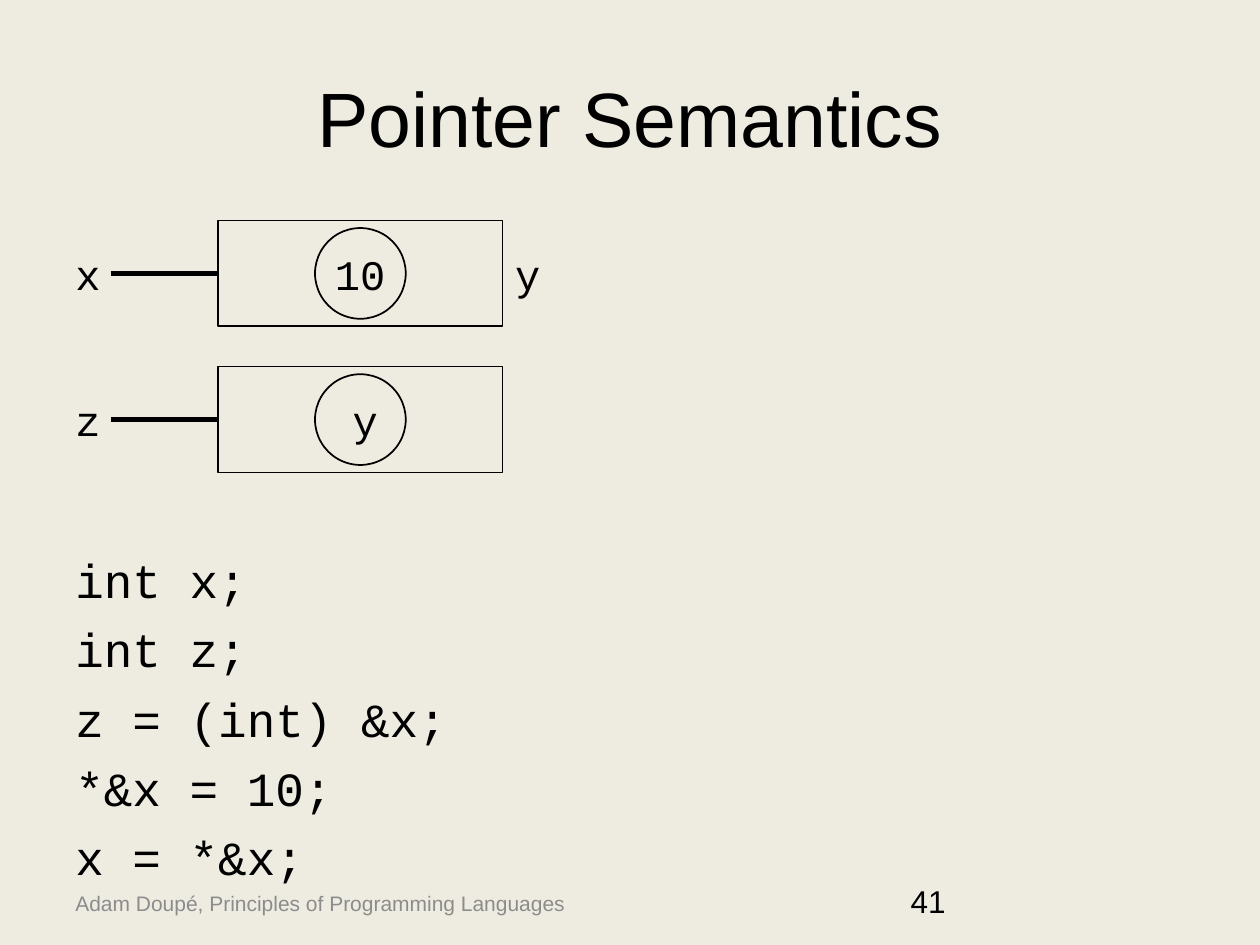
from dataclasses import dataclass

from lxml import etree
from pptx import Presentation
from pptx import util as u
from pptx.dml.color import RGBColor
from pptx.enum import shapes, text
from pptx.oxml.ns import qn


@dataclass(frozen=True)
class Theme:
    back: str = "EEECE1"
    ink: str = "000000"
    gray: str = "8C8C8C"
    sans: str = "Arial"
    mono: str = "Courier New"
    head: float = 44
    code: float = 27.2
    label: float = 24
    page: float = 18
    foot: float = 12
    thin: float = 1
    thick: float = 3


THEME = Theme()


def write(frame, lines, font=THEME.sans, size=THEME.label, color=THEME.ink,
          align=text.PP_ALIGN.LEFT, anchor=text.MSO_ANCHOR.TOP, gap=0):
    """Fill a text frame, one paragraph per line."""
    frame.word_wrap = True
    frame.vertical_anchor = anchor
    for i, line in enumerate(lines.split("\n")):
        para = frame.paragraphs[0] if i == 0 else frame.add_paragraph()
        para.alignment = align
        para.space_before = u.Pt(gap if i else 0)
        run = para.add_run()
        run.text = line
        run.font.name = font
        run.font.size = u.Pt(size)
        run.font.color.rgb = RGBColor.from_string(color)


class Deck:
    def __init__(self, theme):
        self.theme = theme
        self.file = Presentation()
        self.file.slide_width = u.Inches(10)
        self.file.slide_height = u.Inches(7.5)
        self.slide = None

    def start(self, title):
        self.slide = self.file.slides.add_slide(self.file.slide_layouts[5])
        fill = self.slide.background.fill
        fill.solid()
        fill.fore_color.rgb = RGBColor.from_string(self.theme.back)
        head = self.slide.shapes.title
        head.left, head.top = u.Inches(0.5), u.Inches(0.3)
        head.width, head.height = u.Inches(9), u.Inches(1.25)
        write(head.text_frame, title, size=self.theme.head,
              align=text.PP_ALIGN.CENTER, anchor=text.MSO_ANCHOR.MIDDLE)

    def note(self, lines, x, y, w, h, inset=0.05, **style):
        box = self.slide.shapes.add_textbox(*map(u.Inches, (x, y, w, h)))
        box.text_frame.margin_top = u.Inches(inset)
        write(box.text_frame, lines, **style)

    def ink(self, line, width):
        line.color.rgb = RGBColor.from_string(self.theme.ink)
        line.width = u.Pt(width)

    def outline(self, kind, x, y, w, h):
        item = self.slide.shapes.add_shape(kind, *map(u.Inches, (x, y, w, h)))
        item.shadow.inherit = False
        item.fill.background()
        self.ink(item.line, self.theme.thin)
        return item

    def link(self, x, y, cell):
        """Draw a line from a point to the left side of a cell."""
        line = self.slide.shapes.add_connector(
            shapes.MSO_CONNECTOR.STRAIGHT, u.Inches(x), u.Inches(y),
            cell.left, u.Inches(y))
        line.end_connect(cell, 1)
        self.ink(line.line, self.theme.thick)
        etree.SubElement(line._element.spPr, qn("a:effectLst"))

    def memory(self, name, y):
        """Draw a named memory cell with a circle for its value."""
        mono = self.theme.mono
        cell = self.outline(shapes.MSO_SHAPE.RECTANGLE, 1.73, y, 2.26, 0.84)
        self.note(name, 0.5, y + 0.17, 0.38, 0.5, font=mono)
        self.link(0.88, y + 0.42, cell)
        self.outline(shapes.MSO_SHAPE.OVAL, 2.5, y + 0.06, 0.72, 0.72)


def main():
    deck = Deck(THEME)
    deck.start("Pointer Semantics")

    # Memory cells, their values and the address label
    top, step = 1.75, 1.16
    for i, (name, value, x) in enumerate([("x", "10", 2.56), ("z", "y", 2.7)]):
        y = top + i * step
        deck.memory(name, y)
        deck.note(value, x, y + 0.17, 0.65, 0.5, font=THEME.mono)
    deck.note("y", 3.99, top + 0.17, 0.65, 0.5, font=THEME.mono)

    # Code
    deck.note("int x;\nint z;\nz = (int) &x;\n*&x = 10;\nx = *&x;",
              0.5, 4.24, 9, 2.42, inset=0.13,
              font=THEME.mono, size=THEME.code, gap=7)

    # Footer and page number
    deck.note("Adam Doupé, Principles of Programming Languages",
              0.5, 6.97, 4.26, 0.4, size=THEME.foot, color=THEME.gray,
              anchor=text.MSO_ANCHOR.MIDDLE)
    deck.note("41", 7.13, 6.95, 2.33, 0.4, size=THEME.page)

    deck.file.save("out.pptx")


if __name__ == "__main__":
    main()
